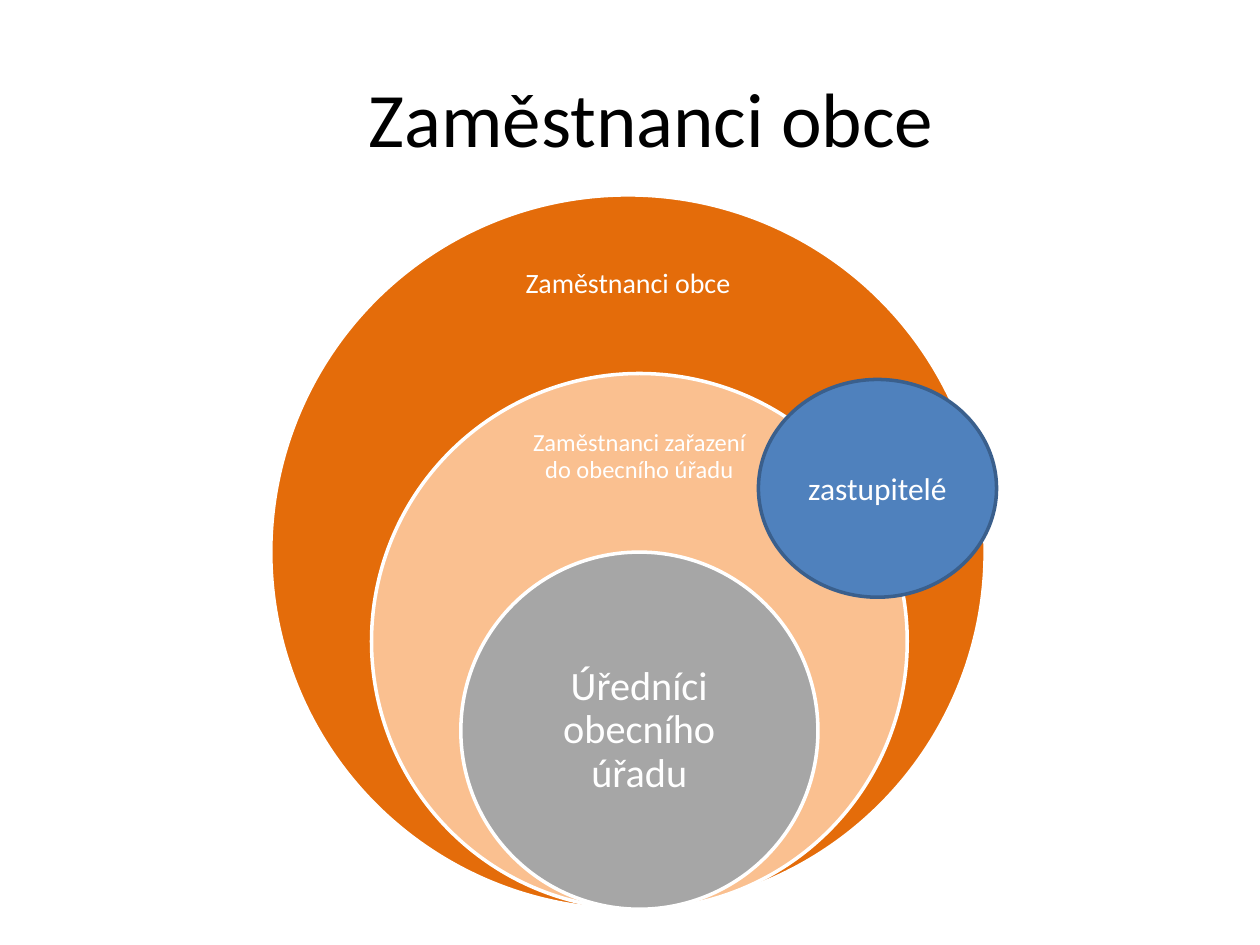
"""Builds a slide of nested circles showing the employees of a municipality."""
from pptx import Presentation
from pptx.dml.color import RGBColor
from pptx.enum.shapes import MSO_SHAPE
from pptx.enum.text import MSO_ANCHOR, PP_ALIGN
from pptx.util import Cm, Pt

TITLE = "Zaměstnanci obce"
TITLE_AREA = (1.5, 0.99, 23.27, 2.74)
CIRCLES_BOTTOM = 18.33
CIRCLES = [
    dict(text="Zaměstnanci obce", fill="E46C0A", center=12.66, diameter=14.4,
         label_top=4.65, label_size=(5.03, 2.16), inset=0.3, points=16),
    dict(text="Zaměstnanci zařazení do obecního úřadu", fill="FAC090", center=12.89, diameter=10.8,
         label_top=8.2, label_size=(5.03, 2.03), inset=0.28, points=14),
    dict(text="Úředníci obecního úřadu", fill="A6A6A6", center=12.89, diameter=7.2,
         label_top=12.93, label_size=(5.08, 3.61), inset=0.46, points=23),
]
COUNCIL = dict(text="zastupitelé", area=(15.29, 7.65, 4.8, 4.39),
               fill="4F81BD", line="3A5F8C", points=18)


def color(value):
    return RGBColor.from_string(value)


def lengths(area):
    return [Cm(value) for value in area]


def write(box, text, points, shade="FFFFFF", inset=0.25, spacing=1.0):
    frame = box.text_frame
    frame.text = text
    frame_format = dict(word_wrap=True, vertical_anchor=MSO_ANCHOR.MIDDLE,
                        margin_left=Cm(inset), margin_right=Cm(inset),
                        margin_top=Cm(inset), margin_bottom=Cm(inset))
    para = frame.paragraphs[0]
    para_format = dict(alignment=PP_ALIGN.CENTER, line_spacing=spacing)
    font = para.runs[0].font
    font_format = dict(name="Calibri", size=Pt(points))
    for target, values in ((frame, frame_format), (para, para_format), (font, font_format)):
        for name, value in values.items():
            setattr(target, name, value)
    font.color.rgb = color(shade)


def add_ellipse(page, area, fill, line):
    ellipse = page.shapes.add_shape(MSO_SHAPE.OVAL, *lengths(area))
    ellipse.shadow.inherit = False
    ellipse.fill.solid()
    ellipse.fill.fore_color.rgb = color(fill)
    ellipse.line.color.rgb = color(line)
    ellipse.line.width = Pt(2)
    return ellipse


def add_circle(page, circle):
    center, diameter = circle["center"], circle["diameter"]
    area = (center - diameter / 2, CIRCLES_BOTTOM - diameter, diameter, diameter)
    add_ellipse(page, area, circle["fill"], "FFFFFF")
    width, height = circle["label_size"]
    label_area = (center - width / 2, circle["label_top"], width, height)
    label = page.shapes.add_textbox(*lengths(label_area))
    write(label, circle["text"], circle["points"], inset=circle["inset"], spacing=0.9)


def main():
    deck = Presentation()
    deck.slide_width, deck.slide_height = Cm(25.4), Cm(19.05)
    page = deck.slides.add_slide(deck.slide_layouts[5])
    title = page.shapes.title
    title.left, title.top, title.width, title.height = lengths(TITLE_AREA)
    write(title, TITLE, 44, shade="000000")
    for circle in CIRCLES:
        add_circle(page, circle)
    council = add_ellipse(page, COUNCIL["area"], COUNCIL["fill"], COUNCIL["line"])
    write(council, COUNCIL["text"], COUNCIL["points"])
    deck.save("out.pptx")


if __name__ == "__main__":
    main()
